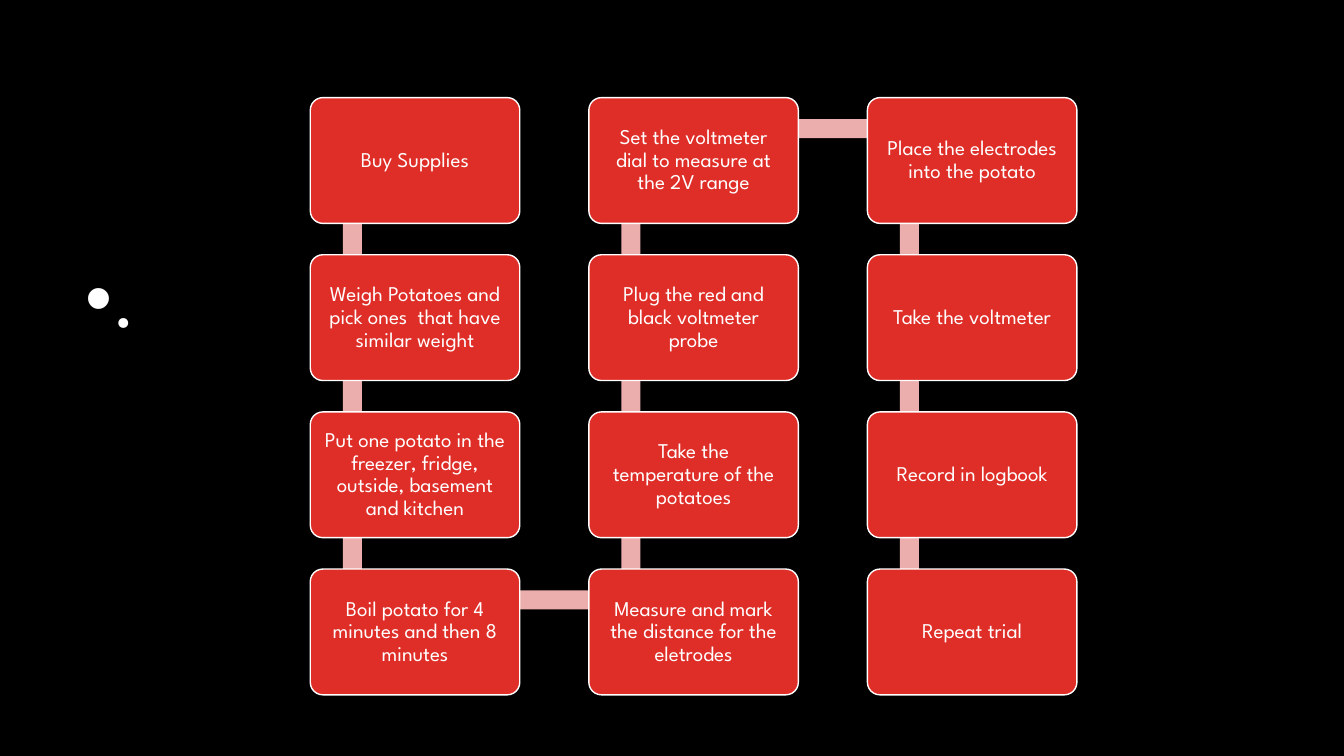
from itertools import pairwise

from lxml import etree
from pptx import Presentation
from pptx.dml.color import RGBColor
from pptx.enum.shapes import MSO_SHAPE
from pptx.enum.text import MSO_ANCHOR, PP_ALIGN
from pptx.oxml.ns import qn
from pptx.util import Cm, Pt

RECTANGLE = MSO_SHAPE.RECTANGLE
ROUNDED = MSO_SHAPE.ROUNDED_RECTANGLE
MIDDLE = MSO_ANCHOR.MIDDLE
CENTER = PP_ALIGN.CENTER

BLACK = RGBColor(0x00, 0x00, 0x00)
WHITE = RGBColor(0xFF, 0xFF, 0xFF)
RED = RGBColor(0xDF, 0x2E, 0x28)
PINK = RGBColor(0xEC, 0xAD, 0xAD)
FONT = "League Spartan"

GRID_LEFT, GRID_TOP = 7.82, 2.46
COLUMN_PITCH, ROW_PITCH = 7.02, 3.96
BOX_WIDTH, BOX_HEIGHT = 5.28, 3.17
ANCHOR_X, ANCHOR_Y = 1.06, 0.78
LINK_THICKNESS = 0.48
ROWS = 4

STEPS = [
    "Buy Supplies",
    "Weigh Potatoes and pick ones  that have similar weight",
    "Put one potato in the freezer, fridge, outside, basement and kitchen",
    "Boil potato for 4 minutes and then 8 minutes",
    "Measure and mark the distance for the eletrodes",
    "Take the temperature of the potatoes",
    "Plug the red and black voltmeter probe",
    "Set the voltmeter dial to measure at the 2V range",
    "Place the electrodes into the potato",
    "Take the voltmeter",
    "Record in logbook",
    "Repeat trial",
]


def step_position(index):
    column, row = divmod(index, ROWS)
    if column % 2:
        row = ROWS - 1 - row
    return GRID_LEFT + column * COLUMN_PITCH, GRID_TOP + row * ROW_PITCH


def add_filled_shape(slide, kind, left, top, width, height, color):
    shape = slide.shapes.add_shape(kind, Cm(left), Cm(top), Cm(width), Cm(height))
    shape.shadow.inherit = False
    shape.fill.solid()
    shape.fill.fore_color.rgb = color
    shape.line.fill.background()
    return shape


def add_run(paragraph, text, size):
    paragraph.line_spacing = 0.9
    run = paragraph.add_run()
    run.text = text
    run.font.name = FONT
    run.font.size = Pt(size)
    run.font.color.rgb = WHITE


def add_link(slide, start, end):
    left, right = sorted((start[0], end[0]))
    top, bottom = sorted((start[1], end[1]))
    width = max(right - left, LINK_THICKNESS)
    height = max(bottom - top, LINK_THICKNESS)
    center_x = (left + right) / 2 + ANCHOR_X
    center_y = (top + bottom) / 2 + ANCHOR_Y
    add_filled_shape(slide, RECTANGLE, center_x - width / 2,
                     center_y - height / 2, width, height, PINK)


def add_step(slide, position, text):
    box = add_filled_shape(slide, ROUNDED, *position, BOX_WIDTH, BOX_HEIGHT, RED)
    box.adjustments[0] = 0.1
    box.line.color.rgb = WHITE
    box.line.width = Pt(1)
    frame = box.text_frame
    frame.word_wrap = True
    frame.vertical_anchor = MIDDLE
    frame.margin_left = frame.margin_right = Cm(0.25)
    frame.margin_top = frame.margin_bottom = Cm(0.25)
    paragraph = frame.paragraphs[0]
    paragraph.alignment = CENTER
    add_run(paragraph, text, 15)


def add_bullet_text(slide, text):
    box = slide.shapes.add_textbox(Cm(1.9), Cm(6.45), Cm(5), Cm(2.5))
    box.text_frame.word_wrap = True
    paragraph = box.text_frame.paragraphs[0]
    properties = paragraph._p.get_or_add_pPr()
    properties.set("marL", str(Cm(0.64)))
    properties.set("indent", str(Cm(-0.64)))
    etree.SubElement(properties, qn("a:buFont")).set("typeface", "Arial")
    etree.SubElement(properties, qn("a:buChar")).set("char", "•")
    add_run(paragraph, text, 55)


def main():
    presentation = Presentation()
    presentation.slide_width = Cm(33.87)
    presentation.slide_height = Cm(19.05)
    slide = presentation.slides.add_slide(presentation.slide_layouts[6])
    slide.background.fill.solid()
    slide.background.fill.fore_color.rgb = BLACK

    add_bullet_text(slide, ".")
    positions = [step_position(index) for index in range(len(STEPS))]
    for start, end in pairwise(positions):
        add_link(slide, start, end)
    for position, text in zip(positions, STEPS):
        add_step(slide, position, text)

    presentation.save("out.pptx")


if __name__ == "__main__":
    main()
